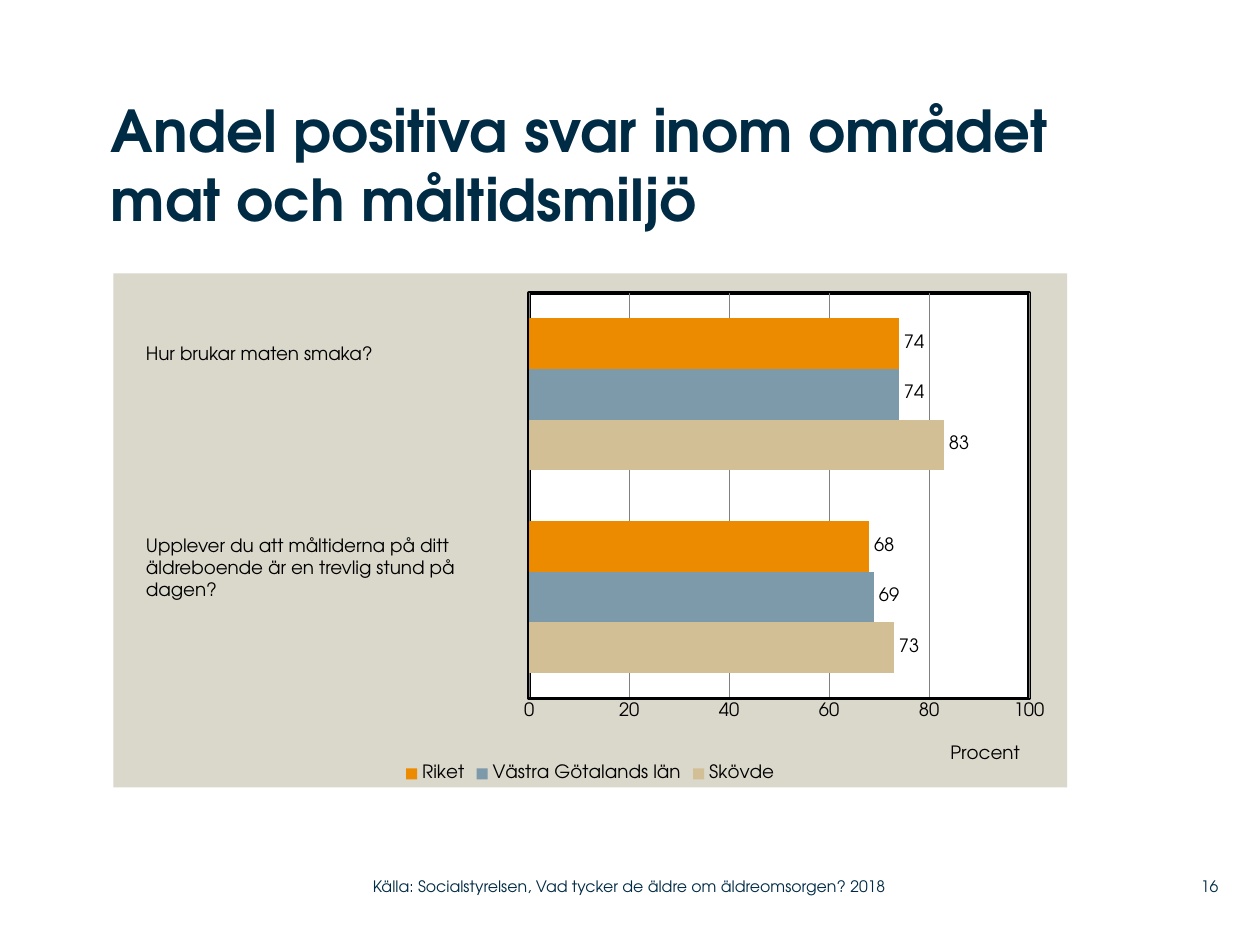
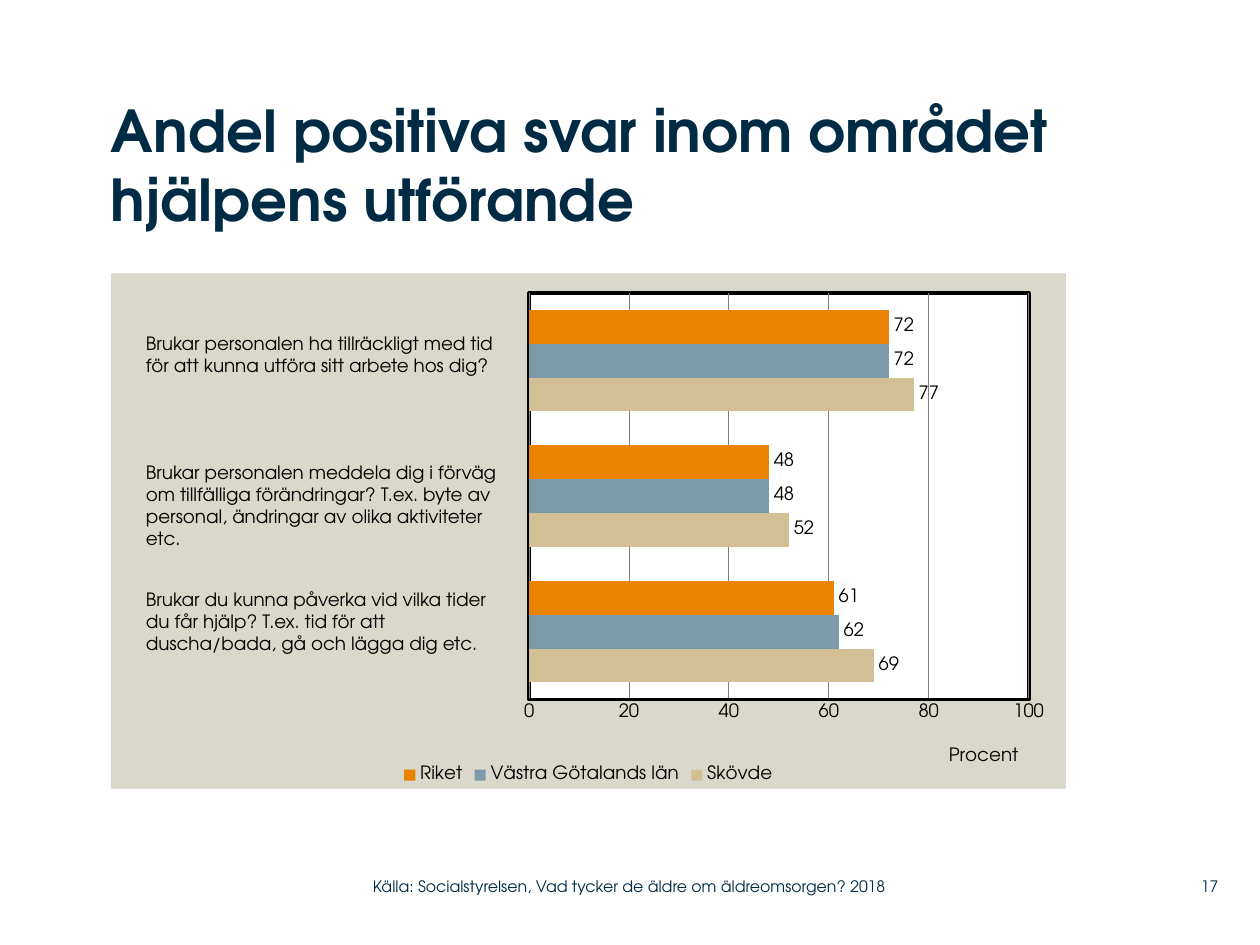
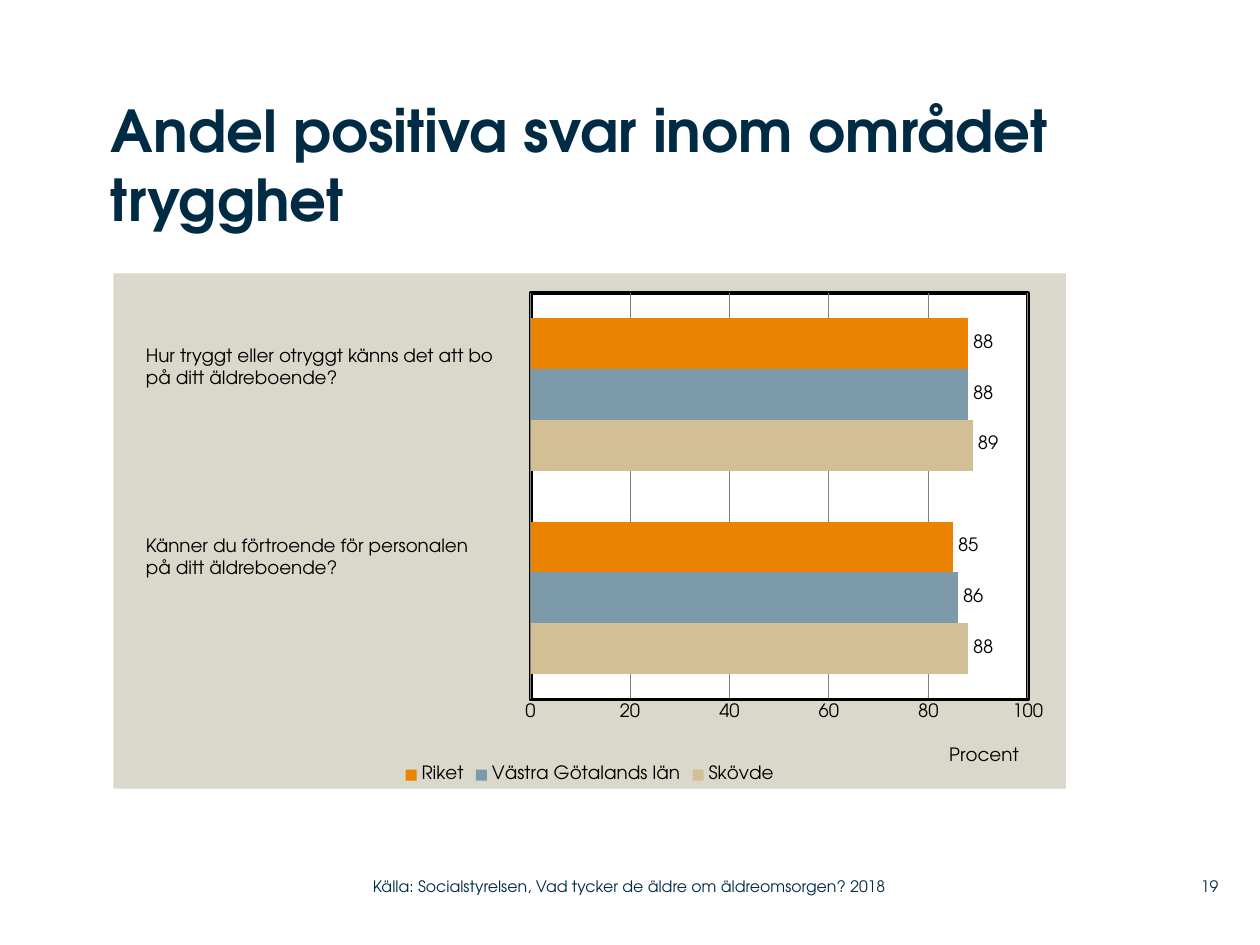
from lxml import etree
from pptx import Presentation
from pptx.chart.data import CategoryChartData
from pptx.dml.color import RGBColor
from pptx.enum.chart import XL_CHART_TYPE, XL_LABEL_POSITION, XL_LEGEND_POSITION, XL_TICK_MARK
from pptx.enum.text import MSO_ANCHOR, MSO_AUTO_SIZE, PP_ALIGN
from pptx.oxml import parse_xml
from pptx.oxml.ns import nsdecls, qn
from pptx.util import Inches, Pt

FONT = "TeX Gyre Adventor"
NAVY, BLACK, WHITE, GREY = "002B45", "000000", "FFFFFF", "808080"
PANEL, SAND, BLUE = "DAD7CB", "D3BF96", "7D9AAA"
SOURCE = "Källa: Socialstyrelsen, Vad tycker de äldre om äldreomsorgen? 2018"
AREAS = ("Skövde", "Västra Götalands län", "Riket")

# Values run from the lowest bar group to the highest, one row per area.
SLIDES = [
    {
        "topic": "mat och måltidsmiljö", "page": 16, "width": 8.42,
        "box": (0.9, 2.17, 7.57, 4.08), "plot": (0.436, 0.038, 0.524, 0.789),
        "orange": "ED8B00", "values": [(73, 83), (69, 74), (68, 74)],
        "asks": [
            (0.5, 0.28, ["Hur brukar maten smaka?"]),
            (2.02, 0.63, ["Upplever du att måltiderna på ditt äldreboende är en "
                          "trevlig stund på", "dagen?"]),
        ],
    },
    {
        "topic": "hjälpens utförande", "page": 17, "width": 7.6,
        "box": (0.88, 2.17, 7.58, 4.09), "plot": (0.438, 0.038, 0.523, 0.789),
        "orange": "E98300", "values": [(69, 52, 77), (62, 48, 72), (61, 48, 72)],
        "asks": [
            (0.42, 0.45, ["Brukar personalen ha tillräckligt med tid",
                          "för att kunna utföra sitt arbete hos dig?"]),
            (1.44, 0.81, ["Brukar personalen meddela dig i förväg",
                          "om tillfälliga förändringar? T.ex. byte av personal, "
                          "ändringar av olika aktiviteter", "etc."]),
            (2.45, 0.63, ["Brukar du kunna påverka vid vilka tider",
                          "du får hjälp? T.ex. tid för att",
                          "duscha/bada, gå och lägga dig etc."]),
        ],
    },
    {
        "topic": "trygghet", "page": 19, "width": 7.6,
        "box": (0.9, 2.17, 7.56, 4.09), "plot": (0.438, 0.038, 0.522, 0.789),
        "orange": "E98300", "values": [(88, 89), (86, 88), (85, 88)],
        "asks": [
            (0.51, 0.45, ["Hur tryggt eller otryggt känns det att bo",
                          "på ditt äldreboende?"]),
            (2.02, 0.45, ["Känner du förtroende för personalen",
                          "på ditt äldreboende?"]),
        ],
    },
]


def color(code):
    return RGBColor.from_string(code)


def style(font, size, code, bold=False):
    font.name, font.size, font.bold = FONT, Pt(size), bold
    font.color.rgb = color(code)


def write(slide, box, lines, size, code, bold=False, inset=0,
          anchor=MSO_ANCHOR.TOP, align=PP_ALIGN.LEFT):
    """Add a wrapped text box with one paragraph per line."""
    frame = slide.shapes.add_textbox(*map(Inches, box)).text_frame
    frame.word_wrap = True
    frame.vertical_anchor = anchor
    frame.margin_left = frame.margin_right = Inches(inset)
    frame.margin_top = frame.margin_bottom = Inches(inset / 2)
    frame.text = "\n".join(lines)
    for par in frame.paragraphs:
        par.alignment = align
        style(par.font, size, code, bold)
    return frame


def place(node, index, **spots):
    """Give a chart part a manual layout, in fractions of the chart."""
    old = node.find(qn("c:layout"))
    if old is not None:
        node.remove(old)
    layout = parse_xml(f"<c:layout {nsdecls('c')}><c:manualLayout/></c:layout>")
    for tag, val in spots.items():
        etree.SubElement(layout[0], qn(f"c:{tag}")).set("val", str(val))
    node.insert(index, layout)


def paint(fill, edge=None):
    """Return chart shape properties with a fill and an optional edge."""
    def solid(code):
        return f'<a:solidFill><a:srgbClr val="{code}"/></a:solidFill>'
    line = f'<a:ln w="{Pt(2.25)}">{solid(edge)}</a:ln>' if edge else "<a:ln><a:noFill/></a:ln>"
    return parse_xml(f"<c:spPr {nsdecls('c', 'a')}>{solid(fill)}{line}</c:spPr>")


def add_axes(chart):
    chart.category_axis.visible = False
    axis = chart.value_axis
    axis.minimum_scale, axis.maximum_scale, axis.major_unit = 0, 100, 20
    axis.major_tick_mark = axis.minor_tick_mark = XL_TICK_MARK.NONE
    axis.format.line.color.rgb = color(BLACK)
    axis.format.line.width = Pt(2)
    axis.has_major_gridlines = True
    grid = axis.major_gridlines.format.line
    grid.color.rgb, grid.width = color(GREY), Pt(0.5)
    style(axis.tick_labels.font, 10.5, BLACK)
    title = axis.axis_title
    title.text_frame.text = "Procent"
    style(title.text_frame.paragraphs[0].font, 10.5, BLACK)
    place(title._element, 1, xMode="edge", yMode="edge", x=0.874, y=0.91)


def add_bars(slide, box, plot, values, orange):
    data = CategoryChartData()
    data.categories = [str(n + 1) for n in range(len(values[0]))]
    for area, row in zip(AREAS, values):
        data.add_series(area, row)
    chart = slide.shapes.add_chart(
        XL_CHART_TYPE.BAR_CLUSTERED, *map(Inches, box), data).chart
    chart.has_title = False
    style(chart.font, 10.5, BLACK)
    chart.has_legend = True
    chart.legend.position = XL_LEGEND_POSITION.BOTTOM
    chart.legend.include_in_layout = False
    style(chart.legend.font, 10.5, BLACK)
    bars = chart.plots[0]
    bars.gap_width, bars.overlap, bars.vary_by_categories = 100, 0, False
    for series, code in zip(bars.series, (SAND, BLUE, orange)):
        series.format.fill.solid()
        series.format.fill.fore_color.rgb = color(code)
        labels = series.data_labels
        labels.show_value = True
        labels.position = XL_LABEL_POSITION.OUTSIDE_END
        style(labels.font, 10.5, BLACK)
    add_axes(chart)
    root = chart._chartSpace
    root.find(qn("c:chart")).addnext(paint(PANEL))
    area = root.find(".//" + qn("c:plotArea"))
    area.append(paint(WHITE, BLACK))
    left, top, width, height = plot
    place(area, 0, layoutTarget="inner", xMode="edge", yMode="edge",
          x=left, y=top, w=width, h=height)


def add_asks(slide, top, asks):
    """Write the questions beside their bar groups."""
    for drop, height, lines in asks:
        frame = write(slide, (1.06, top + drop, 3.02, height), lines, 10.5, BLACK, inset=0.1)
        frame.auto_size = MSO_AUTO_SIZE.SHAPE_TO_FIT_TEXT


def add_footer(slide, page):
    write(slide, (9.2, 6.89, 0.47, 0.29), [str(page)], 9, NAVY,
          anchor=MSO_ANCHOR.MIDDLE, align=PP_ALIGN.RIGHT)
    write(slide, (2.96, 6.89, 4.43, 0.29), [SOURCE], 9, NAVY, anchor=MSO_ANCHOR.MIDDLE)


def add_slide(deck, topic, page, width, box, plot, orange, values, asks):
    slide = deck.slides.add_slide(deck.slide_layouts[6])
    write(slide, (0.88, 0.75, width, 1.42),
          [f"Andel positiva svar inom området {topic}"], 33, NAVY, bold=True)
    add_bars(slide, box, plot, values, orange)
    add_asks(slide, box[1], asks)
    add_footer(slide, page)


def main():
    deck = Presentation()
    deck.slide_width, deck.slide_height = Inches(10), Inches(7.5)
    for facts in SLIDES:
        add_slide(deck, **facts)
    deck.save("out.pptx")


if __name__ == "__main__":
    main()
